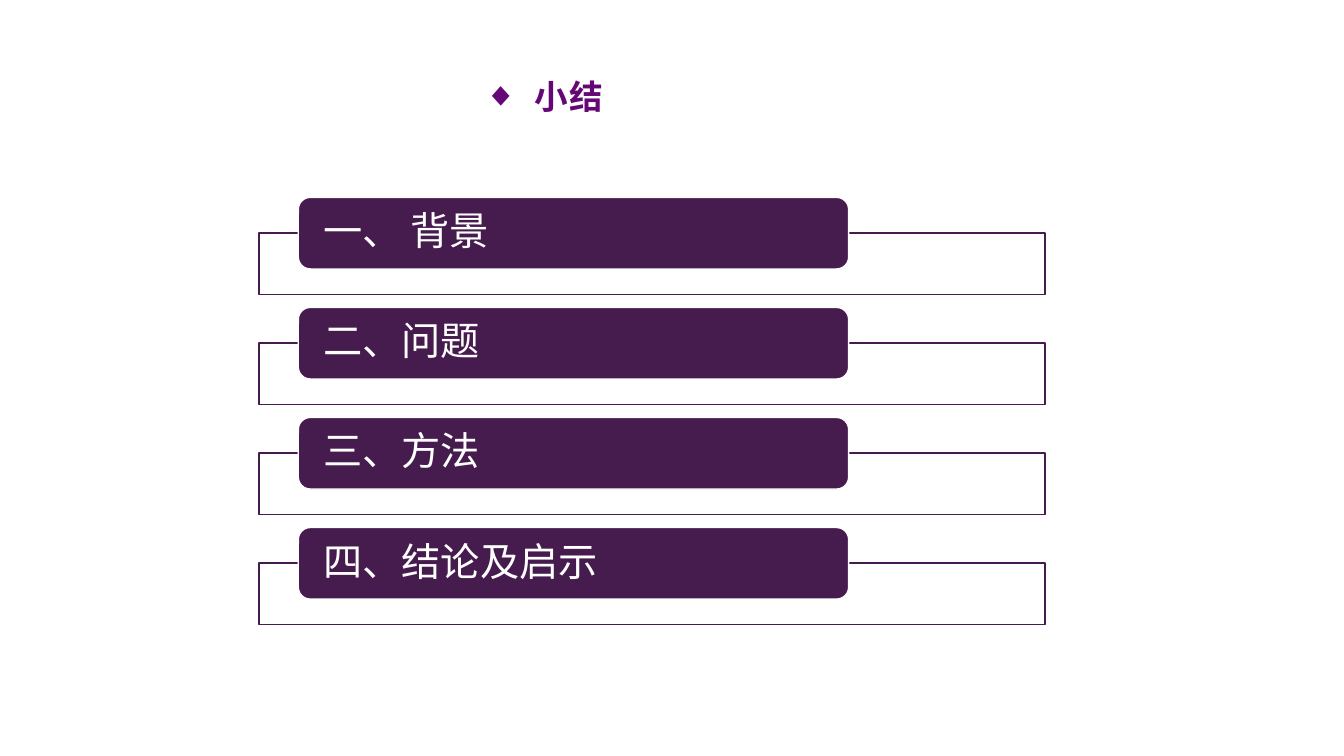
from dataclasses import dataclass

from lxml import etree
from pptx import Presentation
from pptx.dml import color
from pptx.enum import shapes, text
from pptx.oxml import ns
from pptx.util import Pt


@dataclass(frozen=True)
class Theme:
    plum: str = "461B4D"
    violet: str = "650876"
    white: str = "FFFFFF"
    head: int = 24
    label: int = 28
    serif: str = "Times New Roman"
    sans: str = "Arial"


def rgb(code):
    return color.RGBColor.from_string(code)


def child(parent, tag, **attrs):
    return etree.SubElement(parent, ns.qn(tag), attrs)


class Deck:
    def __init__(self, theme):
        self.theme = theme
        self.prs = Presentation()
        self.prs.slide_width, self.prs.slide_height = Pt(960), Pt(540)
        self.slide = self.prs.slides.add_slide(self.prs.slide_layouts[5])

    def font(self, para, name, size, tint, bold=False):
        font = para.font
        font.name, font.size, font.bold = name, Pt(size), bold
        font.color.rgb = rgb(tint)
        return font

    def title(self, words, left, top, width, height):
        box = self.slide.shapes.title
        box.left, box.top, box.width, box.height = map(Pt, (left, top, width, height))
        frame = box.text_frame
        frame.text = words
        frame.auto_size = text.MSO_AUTO_SIZE.NONE
        frame.vertical_anchor = text.MSO_ANCHOR.MIDDLE
        para = frame.paragraphs[0]
        para.alignment = text.PP_ALIGN.LEFT
        # Diamond bullet with a hanging indent
        props = para._p.get_or_add_pPr()
        props.set("marL", str(Pt(36)))
        props.set("indent", str(Pt(-36)))
        child(props, "a:buFont", typeface=self.theme.sans)
        child(props, "a:buChar", char="◆")
        font = self.font(para, self.theme.serif, self.theme.head, self.theme.violet, True)
        font._element.set("spc", "100")

    def block(self, kind, left, top, width, height, fill, line):
        shape = self.slide.shapes.add_shape(kind, *map(Pt, (left, top, width, height)))
        shape.shadow.inherit = False
        shape.fill.solid()
        shape.fill.fore_color.rgb = rgb(fill)
        shape.line.color.rgb = rgb(line)
        shape.line.width = Pt(1)
        return shape

    def panel(self, left, top, width, height):
        shape = self.block(shapes.MSO_SHAPE.RECTANGLE, left, top, width, height,
                           self.theme.white, self.theme.plum)
        tint = shape.fill._xPr.find(".//" + ns.qn("a:srgbClr"))
        child(tint, "a:alpha", val="90000")

    def bar(self, words, left, top, width, height):
        shape = self.block(shapes.MSO_SHAPE.ROUNDED_RECTANGLE, left, top, width, height,
                           self.theme.plum, self.theme.white)
        frame = shape.text_frame
        frame.text = words
        frame.word_wrap = True
        frame.vertical_anchor = text.MSO_ANCHOR.MIDDLE
        frame.margin_left = frame.margin_right = Pt(15.5)
        frame.margin_top = frame.margin_bottom = 0
        para = frame.paragraphs[0]
        para.alignment = text.PP_ALIGN.LEFT
        para.line_spacing = 0.9
        self.font(para, self.theme.sans, self.theme.label, self.theme.white)


def main():
    deck = Deck(Theme())

    # Heading
    deck.title("小结", 338.4, 46.8, 501.8, 43.9)

    # Agenda rows: an outlined panel with a label bar over its top edge
    first, pitch = 141, 78.6
    for row, words in enumerate(("一、 背景", "二、问题", "三、方法", "四、结论及启示")):
        top = first + row * pitch
        deck.panel(185, top + 25.3, 561.6, 43.9)
        deck.bar(words, 213.1, top, 393.1, 51.1)

    deck.prs.save("out.pptx")


if __name__ == "__main__":
    main()
